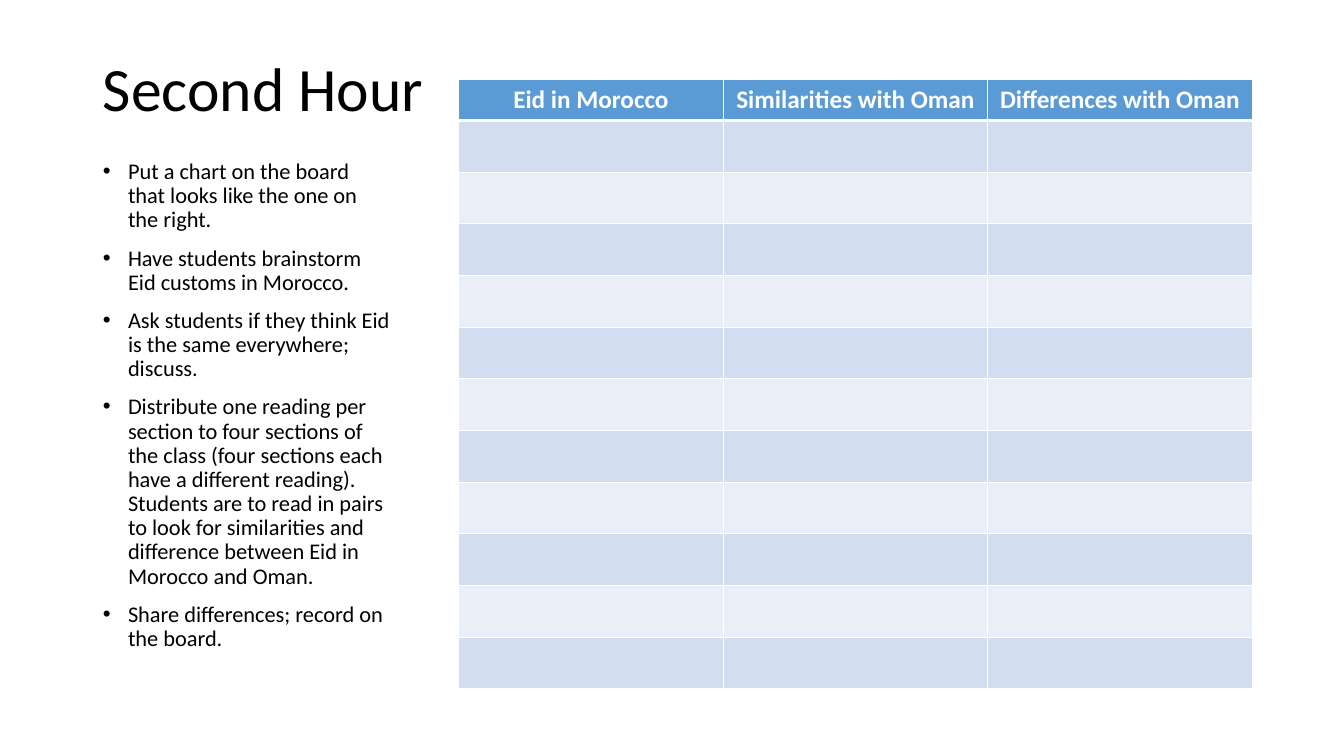
from dataclasses import dataclass

from lxml import etree
from pptx import Presentation
from pptx import util as u
from pptx.dml.color import RGBColor
from pptx.enum import text
from pptx.oxml.ns import qn

SLIDE_WIDTH, SLIDE_HEIGHT = u.Inches(13.33), u.Inches(7.5)


@dataclass(frozen=True)
class Theme:
    font: str = "Calibri"
    ink: str = "000000"
    paper: str = "FFFFFF"
    header_fill: str = "5B9BD5"
    bands: tuple[str, str] = ("D2DEEF", "EAEFF7")
    title_size: int = 44
    steps_size: int = 16
    header_size: int = 18
    rule: int = 1
    header_rule: int = 3


@dataclass(frozen=True)
class Region:
    """Place on the slide, in percent of its width and height."""

    left: float
    top: float
    width: float
    height: float

    def box(self) -> tuple[int, int, int, int]:
        return (
            int(SLIDE_WIDTH * self.left / 100),
            int(SLIDE_HEIGHT * self.top / 100),
            int(SLIDE_WIDTH * self.width / 100),
            int(SLIDE_HEIGHT * self.height / 100),
        )


@dataclass(frozen=True)
class Border:
    side: str
    points: int


THEME = Theme()
TITLE_REGION = Region(6.9, 5.33, 25.58, 13.47)
STEPS_REGION = Region(6.9, 20.53, 22.96, 69.6)
CHART_REGION = Region(34.13, 10.53, 59.04, 80.53)
HEADER_SHARE = 5.33
BLANK_ROWS = 11

TITLE = "Second Hour"
STEPS = (
    "Put a chart on the board that looks like the one on the right.",
    "Have students brainstorm Eid customs in Morocco.",
    "Ask students if they think Eid is the same everywhere; discuss.",
    "Distribute one reading per section to four sections of the class "
    "(four sections each have a different reading). Students are to read in pairs "
    "to look for similarities and difference between Eid in Morocco and Oman.",
    "Share differences; record on the board.",
)
HEADINGS = ("Eid in Morocco", "Similarities with Oman", "Differences with Oman")


def format_runs(paragraph, size: int, color: str, bold: bool = False) -> None:
    for run in paragraph.runs:
        run.font.name = THEME.font
        run.font.size = u.Pt(size)
        run.font.bold = bold
        run.font.color.rgb = RGBColor.from_string(color)


def place(placeholder, region: Region, anchor: text.MSO_ANCHOR) -> None:
    placeholder.left, placeholder.top, placeholder.width, placeholder.height = region.box()
    frame = placeholder.text_frame
    frame.word_wrap = True
    frame.auto_size = text.MSO_AUTO_SIZE.NONE
    frame.vertical_anchor = anchor


def add_bullet(paragraph) -> None:
    properties = paragraph._p.get_or_add_pPr()
    properties.set("marL", str(u.Inches(0.25)))
    properties.set("indent", str(u.Inches(-0.25)))
    etree.SubElement(properties, qn("a:buFont")).set("typeface", "Arial")
    etree.SubElement(properties, qn("a:buChar")).set("char", "•")


def draw_title(slide) -> None:
    title = slide.shapes.title
    place(title, TITLE_REGION, text.MSO_ANCHOR.MIDDLE)
    title.text_frame.text = TITLE
    heading = title.text_frame.paragraphs[0]
    heading.alignment = text.PP_ALIGN.LEFT
    heading.line_spacing = 0.9
    format_runs(heading, THEME.title_size, THEME.ink)


def draw_steps(slide) -> None:
    steps = slide.placeholders[1]
    place(steps, STEPS_REGION, text.MSO_ANCHOR.TOP)
    steps.text_frame.text = "\n".join(STEPS)
    for step in steps.text_frame.paragraphs:
        step.alignment = text.PP_ALIGN.LEFT
        step.line_spacing = 0.9
        step.space_before = u.Pt(10)
        add_bullet(step)
        format_runs(step, THEME.steps_size, THEME.ink)


def style_cell(cell, fill: str, borders: list[Border]) -> None:
    cell.fill.solid()
    cell.fill.fore_color.rgb = RGBColor.from_string(fill)
    properties = cell._tc.get_or_add_tcPr()
    for position, border in enumerate(borders):
        line = etree.Element(qn(f"a:ln{border.side}"), w=str(u.Pt(border.points)))
        solid = etree.SubElement(line, qn("a:solidFill"))
        etree.SubElement(solid, qn("a:srgbClr")).set("val", THEME.paper)
        properties.insert(position, line)


def draw_chart(slide) -> None:
    left, top, width, height = CHART_REGION.box()
    chart = slide.shapes.add_table(
        BLANK_ROWS + 1, len(HEADINGS), left, top, width, height
    ).table
    header_height = int(SLIDE_HEIGHT * HEADER_SHARE / 100)
    for column in chart.columns:
        column.width = width // len(HEADINGS)
    for index, row in enumerate(chart.rows):
        is_header = index == 0
        row.height = header_height if is_header else (height - header_height) // BLANK_ROWS
        fill = THEME.header_fill if is_header else THEME.bands[(index - 1) % 2]
        borders = [
            Border("L", THEME.rule),
            Border("R", THEME.rule),
            Border("T", THEME.header_rule if index == 1 else THEME.rule),
            Border("B", THEME.header_rule if is_header else THEME.rule),
        ]
        for cell in row.cells:
            style_cell(cell, fill, borders)
    for cell, heading in zip(chart.rows[0].cells, HEADINGS):
        cell.text_frame.text = heading
        label = cell.text_frame.paragraphs[0]
        label.alignment = text.PP_ALIGN.CENTER
        format_runs(label, THEME.header_size, THEME.paper, bold=True)


def main() -> None:
    presentation = Presentation()
    presentation.slide_width, presentation.slide_height = SLIDE_WIDTH, SLIDE_HEIGHT
    slide = presentation.slides.add_slide(presentation.slide_layouts[1])
    draw_title(slide)
    draw_steps(slide)
    draw_chart(slide)
    presentation.save("out.pptx")


if __name__ == "__main__":
    main()
